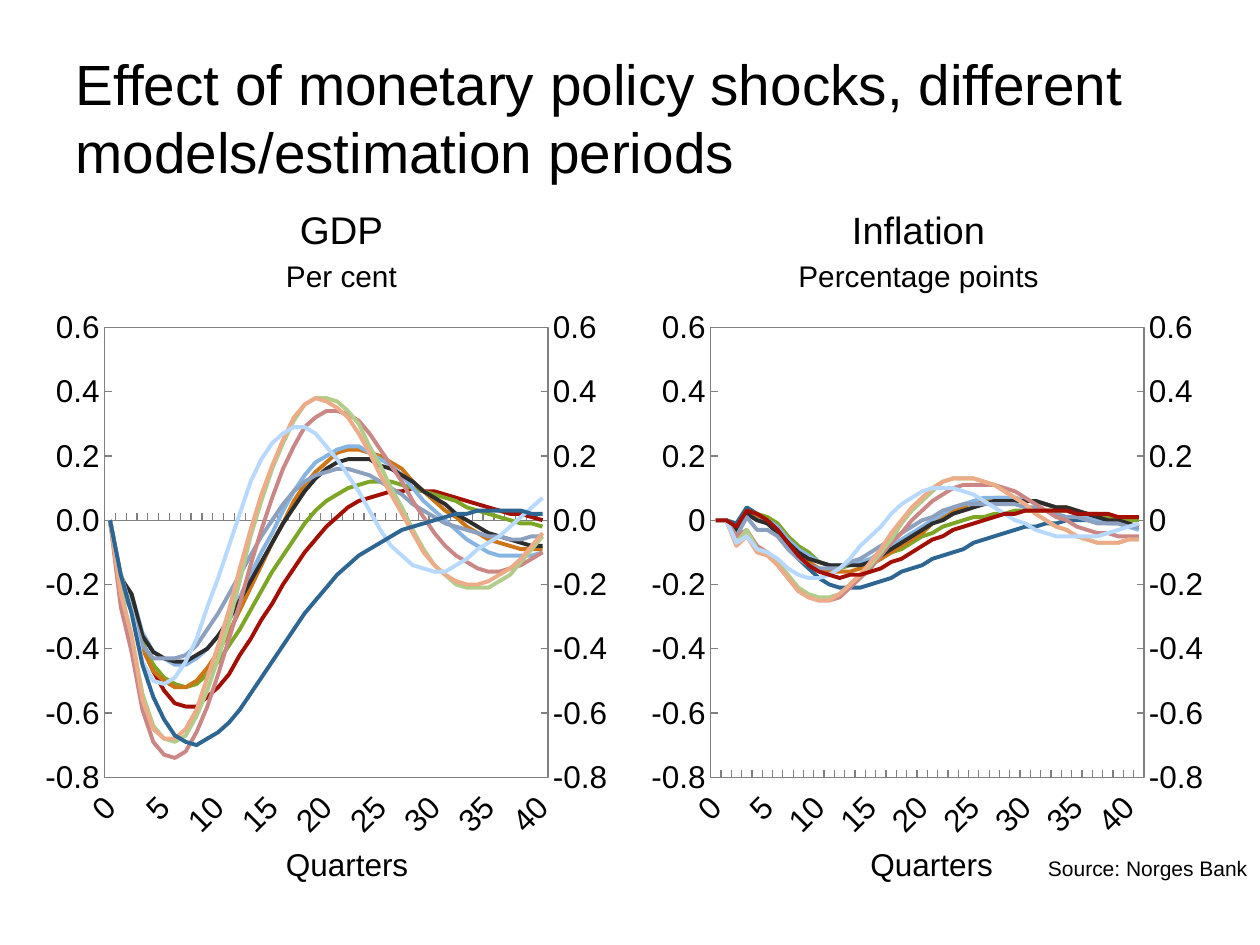
from copy import deepcopy

from lxml import etree
from pptx import Presentation
from pptx.chart.data import CategoryChartData
from pptx.dml.color import RGBColor
from pptx.enum import chart as ch, text as tx
from pptx.oxml import parse_xml
from pptx.oxml.ns import nsdecls, qn
from pptx.util import Inches, Pt

FONT = "Arial"
BLACK = RGBColor(0x00, 0x00, 0x00)
GRAY = RGBColor(0x80, 0x80, 0x80)
RED = RGBColor(0xB8, 0x12, 0x04)
GREEN = RGBColor(0x8F, 0xBC, 0x2B)
ORANGE = RGBColor(0xE9, 0x85, 0x1B)
SKY = RGBColor(0x99, 0xCC, 0xFF)
CHARCOAL = RGBColor(0x33, 0x33, 0x33)
BLUE = RGBColor(0x33, 0x72, 0xA6)

TITLE = "Effect of monetary policy shocks, different models/estimation periods"
SOURCE = "Source: Norges Bank"
QUARTERS = [str(q) for q in range(41)]
PLOT_TOP, PLOT_HEIGHT = 2.6, 3.57
CHART_TOP, CHART_HEIGHT = 2.38, 4.32

# Responses in hundredths at the knot quarters; every response starts from zero.
GDP_KNOTS = [0, 1, 2, 3, 5, 7, 10, 14, 18, 22, 26, 30, 35, 40]
GDP = [
    [0, -18, -27, -39, -53, -58, -52, -31, -10, 4, 9, 9, 4, 0],
    [0, -17, -25, -38, -49, -52, -44, -22, -1, 10, 12, 8, 2, -2],
    [0, -20, -27, -40, -50, -52, -41, -14, 11, 22, 18, 6, -6, -9],
    [0, -18, -23, -35, -43, -45, -36, -10, 14, 23, 17, 3, -10, -10],
    [0, -18, -23, -36, -43, -44, -36, -13, 9, 19, 16, 7, -4, -8],
    [0, -22, -28, -39, -43, -42, -29, -5, 12, 16, 10, 1, -5, -5],
    [0, -27, -41, -59, -73, -72, -48, -3, 29, 33, 17, -4, -16, -10],
    [0, -22, -36, -54, -68, -67, -43, 6, 36, 34, 10, -14, -21, -5],
    [0, -23, -36, -56, -68, -65, -39, 8, 36, 32, 8, -14, -19, -4],
    [0, -17, -28, -44, -51, -44, -18, 19, 29, 14, -8, -16, -7, 7],
    [0, -17, -29, -45, -62, -69, -66, -49, -29, -14, -5, 0, 3, 2],
]
INFLATION_KNOTS = [0, 1, 2, 3, 4, 5, 8, 11, 15, 19, 23, 27, 32, 36, 41]
INFLATION = [
    [0, 0, -1, 4, 2, 0, -12, -20, -20, -15, -10, -5, -1, 0, 1],
    [0, 0, -2, 3, 2, 1, -8, -14, -13, -7, -1, 2, 3, 2, 0],
    [0, 0, -3, 3, 1, 0, -10, -16, -14, -6, 3, 7, 5, 2, -2],
    [0, 0, -5, 2, 0, 0, -9, -14, -12, -4, 4, 7, 5, 1, -3],
    [0, 0, -3, 2, 0, -1, -10, -14, -13, -5, 2, 6, 5, 2, -2],
    [0, 0, -5, 1, -3, -3, -12, -15, -10, -2, 4, 5, 3, 0, -2],
    [0, 0, -5, -3, -8, -10, -22, -25, -15, 0, 10, 11, 3, -3, -5],
    [0, 0, -7, -3, -9, -10, -21, -24, -14, 3, 13, 11, 0, -6, -6],
    [0, 0, -8, -5, -10, -11, -22, -25, -13, 4, 13, 11, 0, -6, -6],
    [0, 0, -7, -5, -9, -10, -17, -17, -5, 7, 10, 4, -4, -5, -1],
    [0, 0, -2, 3, 2, 0, -11, -17, -16, -10, -3, 1, 3, 2, 1],
]
PANELS = [
    dict(heading="GDP", size=22, unit="Per cent", head_left=0.5, left=0.28, width=4.64, plot_left=0.83, plot_width=3.52,
         quarters_left=2.17, knots=GDP_KNOTS, rows=GDP, ends=(RED, BLUE), number_format="0.0",
         crosses=ch.XL_AXIS_CROSSES.AUTOMATIC),
    dict(heading="Inflation", size=21.7, unit="Percentage points", head_left=5.08, left=5.08, width=4.57, plot_left=5.64,
         plot_width=3.44, quarters_left=6.81, knots=INFLATION_KNOTS, rows=INFLATION, ends=(BLUE, RED),
         number_format="General", crosses=ch.XL_AXIS_CROSSES.MINIMUM),
]


def fill_quarters(knots, row):
    """Interpolate a response to every quarter with cubic Hermite pieces."""
    steps = [b - a for a, b in zip(knots, knots[1:])]
    rises = [(b - a) / h for a, b, h in zip(row, row[1:], steps)]
    inner = [(h2 * r1 + h1 * r2) / (h1 + h2) for h1, h2, r1, r2 in zip(steps, steps[1:], rises, rises[1:])]
    slopes = [rises[0], *inner, 1.5 * rises[-1] - 0.5 * inner[-1]]
    values = []
    for i, h in enumerate(steps):
        for quarter in range(h):
            t = quarter / h
            level = row[i] + (row[i + 1] - row[i]) * t * t * (3 - 2 * t)
            bend = h * t * (1 - t) * (slopes[i] * (1 - t) - slopes[i + 1] * t)
            values.append(round((level + bend) / 100, 2))
    return values + [row[-1] / 100]


def write(frame, lines, align=tx.PP_ALIGN.LEFT, anchor=tx.MSO_ANCHOR.TOP, gap=0):
    """Fill a text frame with (text, size) lines; gap is the space between them in points."""
    frame.word_wrap, frame.vertical_anchor = True, anchor
    for i, (line, size) in enumerate(lines):
        para = frame.paragraphs[0] if i == 0 else frame.add_paragraph()
        para.alignment, para.space_before = align, Pt(gap if i else 0)
        run = para.add_run()
        run.text = line
        run.font.name, run.font.size, run.font.color.rgb = FONT, Pt(size), BLACK


def add_text(slide, box, lines, **style):
    write(slide.shapes.add_textbox(*map(Inches, box)).text_frame, lines, **style)


def color_series(chart, ends):
    first, last = ends
    colors = [first, GREEN, ORANGE, SKY, CHARCOAL, BLUE, RED, GREEN, ORANGE, SKY, last]
    for i, (series, color) in enumerate(zip(chart.plots[0].series, colors)):
        series.smooth = False
        series.format.line.width = Pt(2.25)
        series.format.line.color.rgb = color
        tone, share = ("tint", "77000") if 5 <= i < 10 else ("shade", "76000")
        rgb = series._element.find(".//" + qn("a:srgbClr"))
        etree.SubElement(rgb, qn("a:" + tone)).set("val", share)


def format_axes(chart, panel):
    cat, val = chart.category_axis, chart.value_axis
    for axis in (cat, val):
        axis.has_major_gridlines = False
        axis.major_tick_mark, axis.minor_tick_mark = ch.XL_TICK_MARK.INSIDE, ch.XL_TICK_MARK.NONE
        axis.format.line.color.rgb, axis.format.line.width = GRAY, Pt(0.75)
        axis.tick_labels.font.size = Pt(18)
    val.minimum_scale, val.maximum_scale, val.major_unit = -0.8, 0.6, 0.2
    val.crosses = panel["crosses"]
    val.tick_labels.number_format = panel["number_format"]
    val.tick_labels.number_format_is_linked = False
    cat.tick_label_position = ch.XL_TICK_LABEL_POSITION.LOW
    cat._element.find(qn("c:txPr")).find(qn("a:bodyPr")).set("rot", "-2700000")
    for tag, step in (("tickLblSkip", 5), ("tickMarkSkip", 1)):
        skip = parse_xml(f'<c:{tag} {nsdecls("c")} val="{step}"/>')
        cat._element.find(qn("c:noMultiLvlLbl")).addprevious(skip)


def add_right_axis(chart):
    """Move the last series to a second value axis on the right."""
    lines = chart.plots[0]._element
    right = deepcopy(lines)
    lines.remove(lines.findall(qn("c:ser"))[-1])
    for ser in right.findall(qn("c:ser"))[:-1]:
        right.remove(ser)
    lines.addnext(right)
    cat, val = (deepcopy(a._element) for a in (chart.category_axis, chart.value_axis))
    for axis, own, other in ((cat, "5001", "5002"), (val, "5002", "5001")):
        axis.find(qn("c:axId")).set("val", own)
        axis.find(qn("c:crossAx")).set("val", other)
    for ref, number in zip(right.findall(qn("c:axId")), ("5001", "5002")):
        ref.set("val", number)
    cat.find(qn("c:delete")).set("val", "1")
    val.find(qn("c:axPos")).set("val", "r")
    val.find(qn("c:crosses")).set("val", "max")
    chart.value_axis._element.addnext(val)
    val.addnext(cat)


def frame_plot(chart, panel):
    """Place the inner plot area and draw its border."""
    area = chart._chartSpace.find(".//" + qn("c:plotArea"))
    for old in area.findall(qn("c:layout")):
        area.remove(old)
    spots = dict(x=(panel["plot_left"] - panel["left"]) / panel["width"], y=(PLOT_TOP - CHART_TOP) / CHART_HEIGHT,
                 w=panel["plot_width"] / panel["width"], h=PLOT_HEIGHT / CHART_HEIGHT)
    modes = "".join(f'<c:{k}Mode val="edge"/>' for k in "xy")
    places = "".join(f'<c:{k} val="{v:.4f}"/>' for k, v in spots.items())
    area.insert(0, parse_xml(f'<c:layout {nsdecls("c")}><c:manualLayout><c:layoutTarget val="inner"/>'
                             f'{modes}{places}</c:manualLayout></c:layout>'))
    area.append(parse_xml(f'<c:spPr {nsdecls("c", "a")}><a:noFill/><a:ln w="9525"><a:solidFill>'
                          f'<a:srgbClr val="{GRAY}"/></a:solidFill></a:ln></c:spPr>'))


def add_panel(slide, panel):
    add_text(slide, (panel["head_left"], 1.68, 4.42, 0.7), [(panel["heading"], panel["size"]), (panel["unit"], 17)],
             align=tx.PP_ALIGN.CENTER, anchor=tx.MSO_ANCHOR.BOTTOM, gap=3.4)
    data = CategoryChartData()
    data.categories = QUARTERS
    for number, row in enumerate(panel["rows"], 1):
        data.add_series(f"Series {number}", fill_quarters(panel["knots"], row))
    box = map(Inches, (panel["left"], CHART_TOP, panel["width"], CHART_HEIGHT))
    chart = slide.shapes.add_chart(ch.XL_CHART_TYPE.LINE, *box, data).chart
    chart.has_title = chart.has_legend = False
    chart.font.name, chart.font.size, chart.font.color.rgb = FONT, Pt(18), BLACK
    color_series(chart, panel["ends"])
    format_axes(chart, panel)
    add_right_axis(chart)
    frame_plot(chart, panel)
    add_text(slide, (panel["quarters_left"], 6.66, 1.42, 0.4), [("Quarters", 18)])


def main():
    deck = Presentation()
    deck.slide_width, deck.slide_height = Inches(10), Inches(7.5)
    slide = deck.slides.add_slide(deck.slide_layouts[5])
    title = slide.shapes.title
    title.left, title.top, title.width, title.height = map(Inches, (0.5, 0.3, 9, 1.25))
    write(title.text_frame, [(TITLE, 32.4)], anchor=tx.MSO_ANCHOR.MIDDLE)
    for panel in PANELS:
        add_panel(slide, panel)
    add_text(slide, (6.46, 6.74, 3.54, 0.3), [(SOURCE, 12)], align=tx.PP_ALIGN.RIGHT)
    deck.save("out.pptx")


if __name__ == "__main__":
    main()
